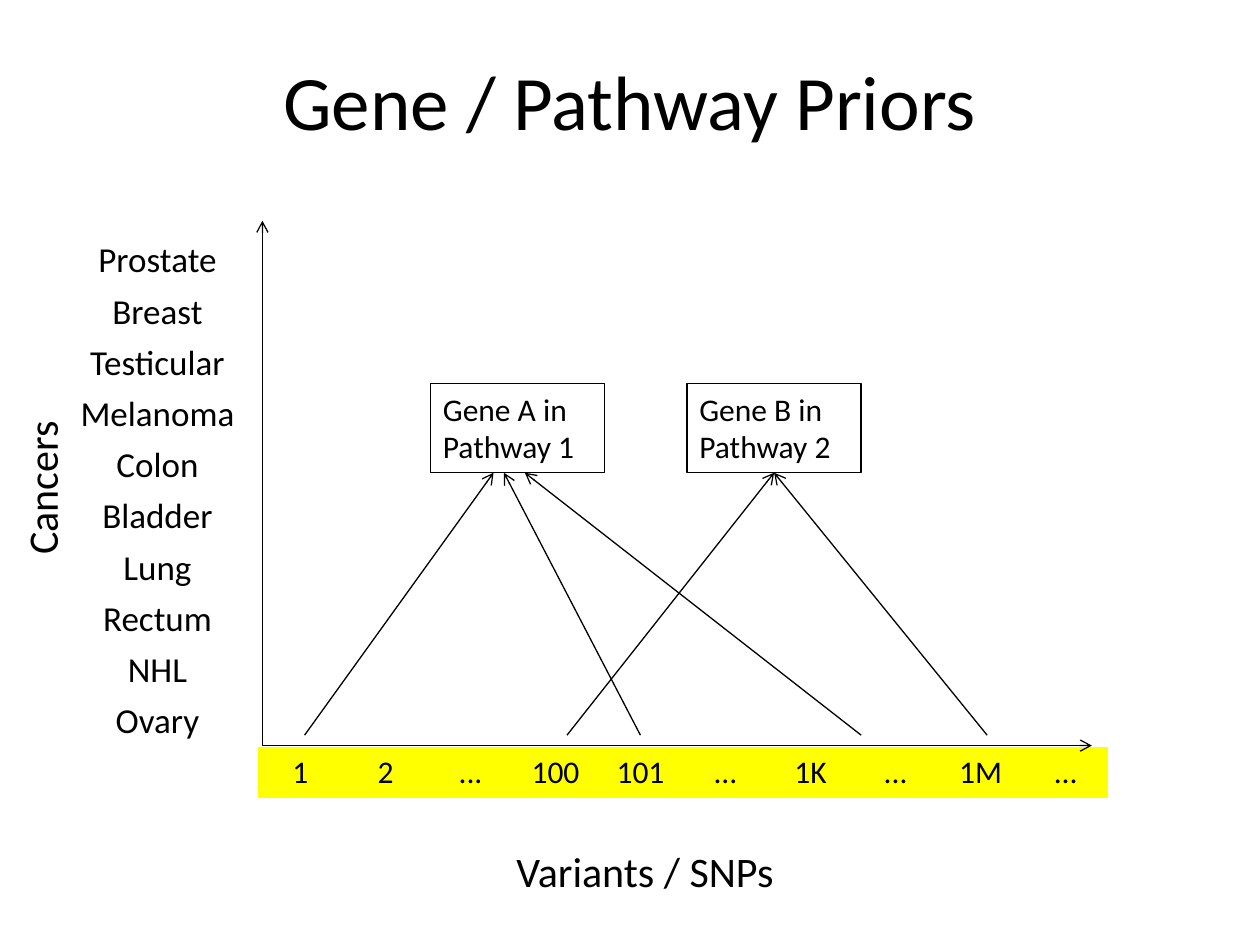
from lxml import etree
from pptx import Presentation
from pptx.dml.color import RGBColor
from pptx.enum.shapes import MSO_CONNECTOR, MSO_SHAPE
from pptx.enum.text import MSO_ANCHOR, PP_ALIGN
from pptx.oxml.ns import qn
from pptx.util import Cm, Pt

NO_STYLE = "{2D5ABB26-0587-4C30-8999-92F81FD0307C}"


def color(hex_code):
    return RGBColor.from_string(hex_code)


class SlideBuilder:
    font = "Calibri"
    ink = "000000"
    paper = "FFFFFF"
    line_width = Pt(0.75)

    def __init__(self, slide):
        self.shapes = slide.shapes

    def add_lines(self, tf, lines, size, align=PP_ALIGN.LEFT):
        for i, line in enumerate(lines):
            p = tf.add_paragraph() if i else tf.paragraphs[0]
            p.alignment = align
            r = p.add_run()
            r.text = line
            r.font.name = self.font
            r.font.size = Pt(size)
            r.font.color.rgb = color(self.ink)

    def text(self, x, y, w, h, line, size, align=PP_ALIGN.LEFT, wrap=False, rotation=0):
        sp = self.shapes.add_textbox(Cm(x), Cm(y), Cm(w), Cm(h))
        sp.rotation = rotation
        tf = sp.text_frame
        tf.word_wrap = wrap
        tf.vertical_anchor = MSO_ANCHOR.MIDDLE
        self.add_lines(tf, [line], size, align)

    def box(self, x, y, w, h, lines):
        sp = self.shapes.add_shape(MSO_SHAPE.RECTANGLE, Cm(x), Cm(y), Cm(w), Cm(h))
        sp.shadow.inherit = False
        sp.fill.background()
        sp.line.color.rgb = color(self.ink)
        sp.line.width = self.line_width
        sp.text_frame.word_wrap = False
        sp.text_frame.vertical_anchor = MSO_ANCHOR.TOP
        self.add_lines(sp.text_frame, lines, 18)
        return sp

    def arrow(self, x1, y1, x2, y2, target=None):
        cn = self.shapes.add_connector(
            MSO_CONNECTOR.STRAIGHT, Cm(x1), Cm(y1), Cm(x2), Cm(y2))
        if target is not None:
            cn.end_connect(target, 2)
        cn.line.color.rgb = color(self.ink)
        cn.line.width = self.line_width
        sp_pr = cn._element.spPr
        etree.SubElement(sp_pr.find(qn("a:ln")), qn("a:tailEnd"), type="arrow")
        etree.SubElement(sp_pr, qn("a:effectLst"))

    def table(self, x, y, w, h, rows, size, fill, margin=None):
        n_rows, n_cols = len(rows), len(rows[0])
        tbl = self.shapes.add_table(n_rows, n_cols, Cm(x), Cm(y), Cm(w), Cm(h)).table
        tbl.first_row = tbl.horz_banding = False
        tbl._tbl.tblPr.find(qn("a:tableStyleId")).text = NO_STYLE
        for i, row in enumerate(rows):
            for j, value in enumerate(row):
                cell = tbl.cell(i, j)
                cell.fill.solid()
                cell.fill.fore_color.rgb = color(fill)
                if margin is not None:
                    cell.vertical_anchor = MSO_ANCHOR.MIDDLE
                    cell.margin_left = cell.margin_right = cell.margin_top = Cm(margin)
                    cell.margin_bottom = 0
                if value:
                    self.add_lines(cell.text_frame, [value], size, PP_ALIGN.CENTER)


def main():
    prs = Presentation()
    prs.slide_width, prs.slide_height = Cm(25.4), Cm(19.05)
    s = SlideBuilder(prs.slides.add_slide(prs.slide_layouts[6]))

    cancers = ["Prostate", "Breast", "Testicular", "Melanoma", "Colon",
               "Bladder", "Lung", "Rectum", "NHL", "Ovary"]
    variants = ["1", "2", "...", "100", "101", "…", "1K", "...", "1M", "…"]
    axis_x, axis_y = 5.29, 15.03
    grid_top, grid_height = 4.73, 10.32

    # Grid with its column and row labels
    s.table(axis_x, grid_top, 16.93, grid_height,
            [[""] * len(variants) for _ in cancers], 18, s.paper)
    s.table(5.2, 15.06, 17.14, 1.03, [variants], 18, "FFFF00")
    s.table(1.06, grid_top, 4.23, grid_height,
            [[name] for name in cancers], 20, s.paper, margin=0.03)

    # Title
    s.text(1.27, 0.43, 22.86, 3.18, "Gene / Pathway Priors", 44,
           PP_ALIGN.CENTER, wrap=True)

    # Axes and their names
    s.arrow(axis_x, axis_y, 22.01, axis_y)
    s.arrow(axis_x, axis_y, axis_x, 4.45)
    s.text(-1.02, 8.94, 3.7, 1.28, "Cancers", 24, rotation=270)
    s.text(10.16, 16.92, 6.48, 1.28, "Variants / SNPs", 24)

    # Genes
    box_y, box_w, box_h = 7.73, 3.51, 1.8
    gene_b_x = 13.85
    s.box(8.68, box_y, box_w, box_h, ["Gene A in", "Pathway 1"])
    gene_b = s.box(gene_b_x, box_y, box_w, box_h, ["Gene B in", "Pathway 2"])

    # Variants pointing to their genes
    start_y, end_y = 14.82, box_y + box_h
    for x1, x2 in [(6.14, 9.95), (12.91, 10.16), (17.36, 10.58)]:
        s.arrow(x1, start_y, x2, end_y)
    for x1 in (11.43, 19.9):
        s.arrow(x1, start_y, gene_b_x + box_w / 2, end_y, gene_b)

    prs.save("out.pptx")


if __name__ == "__main__":
    main()
